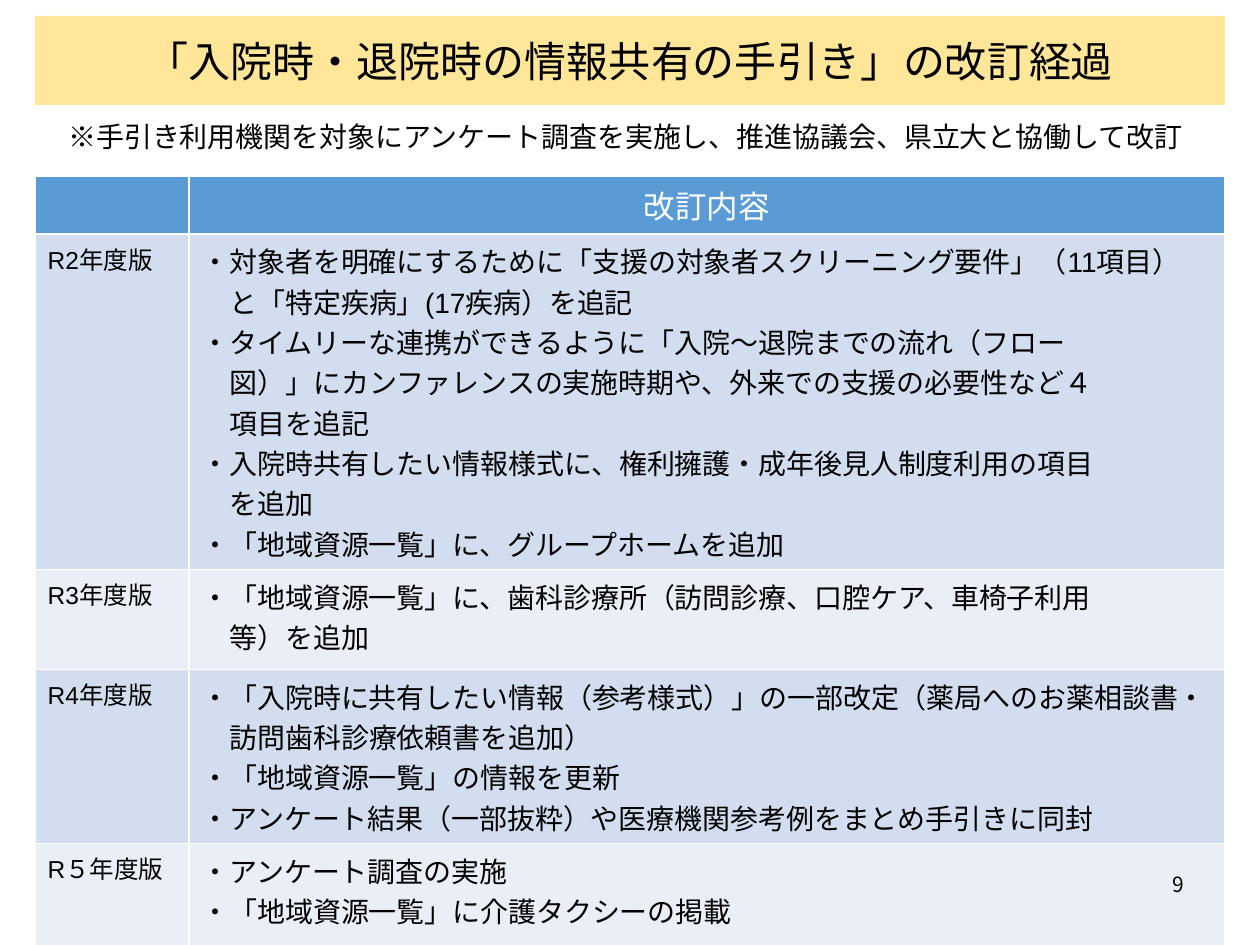
from dataclasses import dataclass

import pptx
import pptx.dml.color
import pptx.enum.lang
import pptx.enum.shapes
import pptx.enum.text
import pptx.oxml
import pptx.oxml.ns
import pptx.util

PX = 914400 // 126
COLORS = {
    "title": "FFE699", "header": "5B9BD5", "odd": "D2DEEF", "even": "EAEFF7",
    "black": "000000", "white": "FFFFFF",
}
ALIGN = pptx.enum.text.PP_ALIGN
ANCHOR = pptx.enum.text.MSO_ANCHOR
JAPANESE = pptx.enum.lang.MSO_LANGUAGE_ID.JAPANESE
JAPANESE_FONT = "Noto Sans CJK JP"
HANGING = 28  # indent of a continued line


@dataclass
class Style:
    size: int
    color: str = "black"
    align: ALIGN = ALIGN.LEFT
    font: str = "Arial"


@dataclass
class Box:
    left: int
    top: int
    width: int
    height: int
    text: str
    style: Style
    frame: dict
    fill: str = ""


@dataclass
class Edition:
    year: str
    height: int
    changes: list[str]


def rgb(name: str) -> pptx.dml.color.RGBColor:
    return pptx.dml.color.RGBColor.from_string(COLORS[name])


def apply(target, values: dict) -> None:
    for key, value in values.items():
        setattr(target, key, value)


def write(frame, lines: list[str], style: Style) -> None:
    """Write one paragraph per line; lines that continue an item are indented."""
    for index, line in enumerate(lines):
        paragraph = frame.paragraphs[0] if index == 0 else frame.add_paragraph()
        paragraph.alignment = style.align
        if index and not line.startswith("・"):
            paragraph._p.get_or_add_pPr().set("marL", str(HANGING * PX))
        run = paragraph.add_run()
        run.text = line
        apply(run.font, {"name": style.font, "size": pptx.util.Pt(style.size),
                         "language_id": JAPANESE})
        run.font.color.rgb = rgb(style.color)
        east_asian = pptx.oxml.parse_xml(
            f'<a:ea {pptx.oxml.ns.nsdecls("a")} typeface="{JAPANESE_FONT}"/>')
        run.font._element.find(pptx.oxml.ns.qn("a:latin")).addnext(east_asian)


def draw_box(slide, box: Box) -> None:
    place = [n * PX for n in (box.left, box.top, box.width, box.height)]
    if box.fill:
        shape = slide.shapes.add_shape(pptx.enum.shapes.MSO_SHAPE.RECTANGLE, *place)
        shape.shadow.inherit = False
        shape.fill.solid()
        shape.fill.fore_color.rgb = rgb(box.fill)
        shape.line.fill.background()
    else:
        shape = slide.shapes.add_textbox(*place)
    apply(shape.text_frame, {"word_wrap": True, **box.frame})
    write(shape.text_frame, [box.text], box.style)


def format_cell(cell, fill: str) -> None:
    # Borders come before the fill in the cell properties
    for side in "LRTB":
        cell._tc.get_or_add_tcPr().append(pptx.oxml.parse_xml(
            f'<a:ln{side} {pptx.oxml.ns.nsdecls("a")} w="12700">'
            f'<a:solidFill><a:srgbClr val="{COLORS["white"]}"/></a:solidFill></a:ln{side}>'))
    cell.fill.solid()
    cell.fill.fore_color.rgb = rgb(fill)


def draw_history(slide, editions: list[Edition]) -> None:
    heights = [57] + [edition.height for edition in editions]
    history = slide.shapes.add_table(
        len(heights), 2, 35 * PX, 176 * PX, 1190 * PX, sum(heights) * PX).table
    for column, width in zip(history.columns, (154, 1036)):
        column.width = width * PX
    for row, height in zip(history.rows, heights):
        row.height = height * PX

    # Header row
    for cell in history.rows[0].cells:
        format_cell(cell, "header")
    heading = history.cell(0, 1)
    heading.vertical_anchor = ANCHOR.MIDDLE
    write(heading.text_frame, ["改訂内容"], Style(18, "white", ALIGN.CENTER))

    # One row per edition
    for number, edition in enumerate(editions, start=1):
        year, changes = history.rows[number].cells
        for cell in (year, changes):
            format_cell(cell, "odd" if number % 2 else "even")
        write(year.text_frame, [edition.year], Style(14))
        write(changes.text_frame, edition.changes, Style(16))


BOXES = [
    Box(35, 16, 1190, 89, "「入院時・退院時の情報共有の手引き」の改訂経過",
        Style(24, align=ALIGN.CENTER), {"vertical_anchor": ANCHOR.MIDDLE}, "title"),
    Box(35, 106, 1182, 57, "※手引き利用機関を対象にアンケート調査を実施し、推進協議会、県立大と協働して改訂",
        Style(16, align=ALIGN.CENTER), {"margin_top": 14 * PX, "margin_bottom": 0}),
    Box(932, 859, 265, 50, "9", Style(12, align=ALIGN.RIGHT, font=JAPANESE_FONT),
        {"vertical_anchor": ANCHOR.MIDDLE}),
]

EDITIONS = [
    Edition("R2年度版", 335, [
        "・対象者を明確にするために「支援の対象者スクリーニング要件」（11項目）",
        "と「特定疾病」(17疾病）を追記",
        "・タイムリーな連携ができるように「入院～退院までの流れ（フロー",
        "図）」にカンファレンスの実施時期や、外来での支援の必要性など４",
        "項目を追記",
        "・入院時共有したい情報様式に、権利擁護・成年後見人制度利用の項目",
        "を追加",
        "・「地域資源一覧」に、グループホームを追加",
    ]),
    Edition("R3年度版", 100, [
        "・「地域資源一覧」に、歯科診療所（訪問診療、口腔ケア、車椅子利用",
        "等）を追加",
    ]),
    Edition("R4年度版", 174, [
        "・「入院時に共有したい情報（参考様式）」の一部改定（薬局へのお薬相談書・",
        "訪問歯科診療依頼書を追加）",
        "・「地域資源一覧」の情報を更新",
        "・アンケート結果（一部抜粋）や医療機関参考例をまとめ手引きに同封",
    ]),
    Edition("R５年度版", 103, [
        "・アンケート調査の実施",
        "・「地域資源一覧」に介護タクシーの掲載",
    ]),
]


def main() -> None:
    deck = pptx.Presentation()
    apply(deck, {"slide_width": 1260 * PX, "slide_height": 945 * PX})
    slide = deck.slides.add_slide(deck.slide_layouts[6])
    title, note, page_number = BOXES
    draw_box(slide, title)
    draw_history(slide, EDITIONS)
    draw_box(slide, note)
    draw_box(slide, page_number)
    deck.save("out.pptx")


if __name__ == "__main__":
    main()
